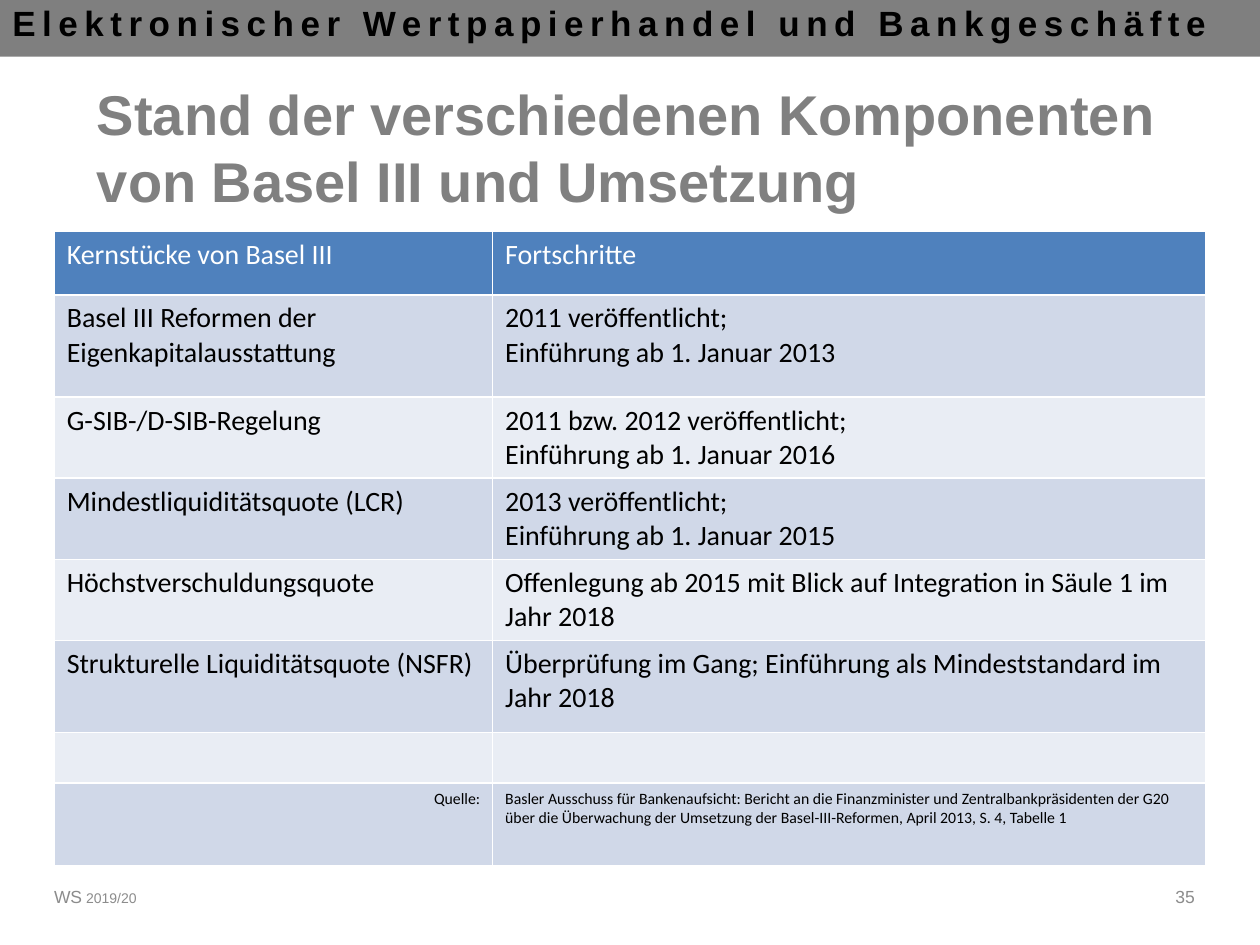
from lxml import etree
from pptx import Presentation
from pptx import util as u
from pptx.dml import color
from pptx.enum import shapes, text
from pptx.oxml import ns

INSET_X, INSET_Y = u.Pt(7.2), u.Pt(3.6)
LEFT, RIGHT = text.PP_ALIGN.LEFT, text.PP_ALIGN.RIGHT
COLUMN_WIDTHS = [250.5, 407.5]
BAND_FILLS = ["E9EDF4", "D0D8E8"]
HEADINGS = ("Kernstücke von Basel III", "Fortschritte")
# Height, component, progress
COMPONENTS = [
    (58.4, "Basel III Reformen der Eigenkapitalausstattung",
     "2011 veröffentlicht; \nEinführung ab 1. Januar 2013"),
    (46.4, "G-SIB-/D-SIB-Regelung",
     "2011 bzw. 2012 veröffentlicht; \nEinführung ab 1. Januar 2016"),
    (46.4, "Mindestliquiditätsquote (LCR)",
     "2013 veröffentlicht; \nEinführung ab 1. Januar 2015"),
    (46.4, "Höchstverschuldungsquote",
     "Offenlegung ab 2015 mit Blick auf Integration in Säule 1 im Jahr 2018"),
    (52.5, "Strukturelle Liquiditätsquote (NSFR)",
     "Überprüfung im Gang; Einführung als Mindeststandard im Jahr 2018"),
    (26.8, "", ""),
]
SOURCE = (47.5, "Quelle:",
          "Basler Ausschuss für Bankenaufsicht: Bericht an die Finanzminister und "
          "Zentralbankpräsidenten der G20 über die Überwachung der Umsetzung der "
          "Basel-III-Reformen, April 2013, S. 4, Tabelle 1")


def rgb(value):
    return color.RGBColor.from_string(value)


def write(frame, words, size=16, font="Calibri", fill="000000", bold=False,
          align=LEFT, extras=None):
    """Put words into a frame; a newline becomes a line break."""
    frame.word_wrap = True
    para = frame.paragraphs[0]
    para.alignment = align
    for index, line in enumerate(words.split("\n")):
        if index:
            para.add_line_break()
        span = para.add_run()
        span.text = line
        span.font.size = u.Pt(size)
        span.font.name = font
        span.font.bold = bold
        span.font.color.rgb = rgb(fill)
        for name, value in (extras or {}).items():
            span.font._element.set(name, value)


def add_text(page, place, words, anchor=text.MSO_ANCHOR.MIDDLE, **style):
    box = page.shapes.add_textbox(*map(u.Pt, place))
    box.text_frame.vertical_anchor = anchor
    write(box.text_frame, words, font="Arial", **style)


def add_band(page, place, fill):
    band = page.shapes.add_shape(shapes.MSO_SHAPE.RECTANGLE, *map(u.Pt, place))
    band.shadow.inherit = False
    band.fill.solid()
    band.fill.fore_color.rgb = rgb(fill)
    band.line.fill.background()


def set_title(page, place, words):
    title = page.shapes.title
    title.left, title.top, title.width, title.height = map(u.Pt, place)
    title.text_frame.auto_size = text.MSO_AUTO_SIZE.NONE
    title.text_frame.vertical_anchor = text.MSO_ANCHOR.MIDDLE
    write(title.text_frame, words, size=32, font="Arial", fill="808080", bold=True)


def outline_cell(cell, width, fill):
    properties = cell._tc.get_or_add_tcPr()
    for index, side in enumerate(("lnL", "lnR", "lnT", "lnB")):
        line = etree.Element(ns.qn("a:" + side), w=str(u.Pt(width)))
        solid = etree.SubElement(line, ns.qn("a:solidFill"))
        etree.SubElement(solid, ns.qn("a:srgbClr"), val=fill)
        properties.insert(index, line)


def fill_cell(cell, words, background, **style):
    cell.margin_left = cell.margin_right = INSET_X
    cell.margin_top = cell.margin_bottom = INSET_Y
    cell.fill.solid()
    cell.fill.fore_color.rgb = rgb(background)
    outline_cell(cell, 1, "FFFFFF")
    write(cell.text_frame, words, **style)


def add_progress_table(page, left, top):
    rows = [(36.5, *HEADINGS), *COMPONENTS, SOURCE]
    height = sum(row[0] for row in rows)
    place = (left, top, sum(COLUMN_WIDTHS), height)
    table = page.shapes.add_table(len(rows), 2, *map(u.Pt, place)).table
    for column, width in zip(table.columns, COLUMN_WIDTHS):
        column.width = u.Pt(width)
    for index, (row_height, *entries) in enumerate(rows):
        table.rows[index].height = u.Pt(row_height)
        is_header, is_source = index == 0, index == len(rows) - 1
        for side, words in enumerate(entries):
            fill_cell(table.cell(index, side), words,
                      "4F81BD" if is_header else BAND_FILLS[index % 2],
                      fill="FFFFFF" if is_header else "000000",
                      size=9 if is_source else 16,
                      align=RIGHT if is_source and side == 0 else LEFT)


def main():
    deck = Presentation()
    deck.slide_width, deck.slide_height = u.Pt(720), u.Pt(540)
    page = deck.slides.add_slide(deck.slide_layouts[5])

    # Course banner
    add_band(page, (-1.4, -2.9, 721.4, 35.3), "7F7F7F")
    add_text(page, (0, -2.9, 711.4, 31.7),
             "Elektronischer Wertpapierhandel und Bankgeschäfte",
             anchor=text.MSO_ANCHOR.TOP, size=20, bold=True,
             align=text.PP_ALIGN.JUSTIFY, extras={"spc": "370"})

    # Title and table
    set_title(page, (48.2, 54, 642.2, 59.8),
              "Stand der verschiedenen Komponenten von Basel III und Umsetzung")
    add_progress_table(page, 31, 132)

    # Footer
    add_text(page, (23.8, 498.2, 198, 28.8), "WS 2019/20",
             size=10, fill="8C8C8C", extras={"cap": "small"})
    add_text(page, (455.8, 498.2, 234, 28.8), "35",
             size=10, fill="8C8C8C", align=RIGHT)

    deck.save("out.pptx")


if __name__ == "__main__":
    main()
